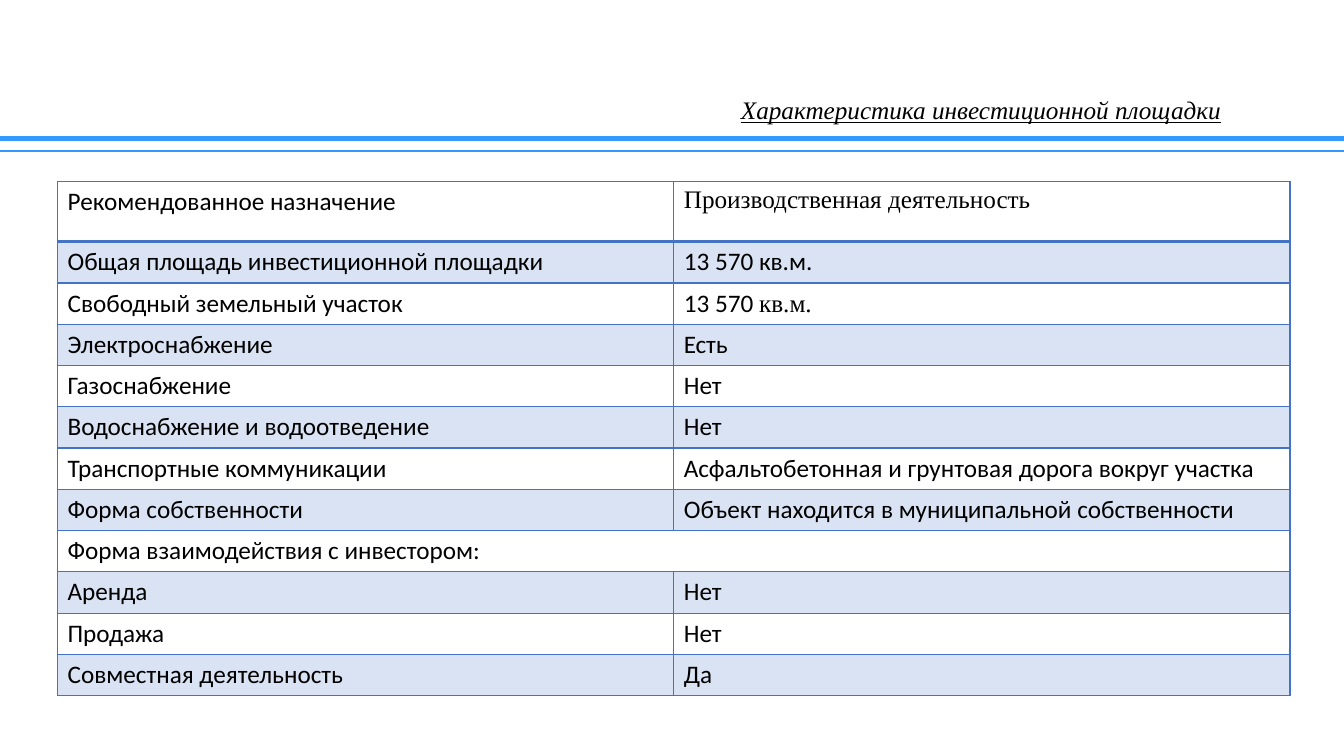
from dataclasses import dataclass

from lxml import etree
from pptx import Presentation
from pptx.dml.color import RGBColor
from pptx.enum import shapes, text
from pptx.oxml import ns
from pptx.util import Cm, Pt


@dataclass(frozen=True)
class Theme:
    """Colours, fonts and type size of the slide."""
    ink: str = "000000"
    rule: str = "3399FF"
    grid: str = "4472C4"
    band: str = "DAE3F3"
    plain: str = "FFFFFF"
    sans: str = "Calibri"
    serif: str = "Times New Roman"
    size: int = 18


THEME = Theme()
TITLE = "Характеристика инвестиционной площадки"
SANS, SERIF = THEME.sans, THEME.serif
ROWS = [
    ("Рекомендованное назначение", [("Производственная деятельность", SERIF)]),
    ("Общая площадь инвестиционной площадки", [("13 570 кв.м.", SANS)]),
    ("Свободный земельный участок", [("13 570 ", SANS), ("кв.м.", SERIF)]),
    ("Электроснабжение", [("Есть", SANS)]),
    ("Газоснабжение", [("Нет", SANS)]),
    ("Водоснабжение и водоотведение", [("Нет", SANS)]),
    ("Транспортные коммуникации",
     [("Асфальтобетонная и грунтовая дорога вокруг участка", SANS)]),
    ("Форма собственности",
     [("Объект находится в муниципальной собственности", SANS)]),
    ("Форма взаимодействия с инвестором:", None),
    ("Аренда", [("Нет", SANS)]),
    ("Продажа", [("Нет", SANS)]),
    ("Совместная деятельность", [("Да", SANS)]),
]
RULES = [(3.5, 3.5), (3.81, 1.5)]
SLIDE_WIDTH, SLIDE_HEIGHT = 33.87, 19.05
TABLE_LEFT, TABLE_TOP = 1.45, 4.57
COLUMN_WIDTH, HEADER_HEIGHT, ROW_HEIGHT = 15.53, 1.52, 1.04


def style_font(font, name):
    """Apply the common type style in the given typeface."""
    font.name = name
    font.size = Pt(THEME.size)
    font.bold = False
    font.color.rgb = RGBColor.from_string(THEME.ink)


def add_title(slide):
    """Place and format the title placeholder."""
    title = slide.shapes.title
    title.left, title.top = Cm(16.94), Cm(2.46)
    title.width, title.height = Cm(15.57), Cm(0.69)
    frame = title.text_frame
    frame.text = TITLE
    frame.auto_size = text.MSO_AUTO_SIZE.NONE
    frame.vertical_anchor = text.MSO_ANCHOR.MIDDLE
    paragraph = frame.paragraphs[0]
    paragraph.alignment = text.PP_ALIGN.CENTER
    paragraph.line_spacing = 0.9
    font = paragraph.runs[0].font
    style_font(font, THEME.serif)
    font.italic = font.underline = True


def add_rule(slide, top, weight):
    """Draw a horizontal line across the slide."""
    rule = slide.shapes.add_connector(
        shapes.MSO_CONNECTOR.STRAIGHT, 0, Cm(top), Cm(SLIDE_WIDTH), Cm(top))
    rule.line.color.rgb = RGBColor.from_string(THEME.rule)
    rule.line.width = Pt(weight)
    etree.SubElement(rule._element.spPr, ns.qn("a:effectLst"))


def set_borders(cell, top, bottom):
    """Give a cell solid borders with the given top and bottom widths."""
    properties = cell._tc.get_or_add_tcPr()
    for side, weight in (("L", 1), ("R", 1), ("T", top), ("B", bottom)):
        line = etree.SubElement(properties, ns.qn(f"a:ln{side}"), w=str(Pt(weight)))
        fill = etree.SubElement(line, ns.qn("a:solidFill"))
        etree.SubElement(fill, ns.qn("a:srgbClr"), val=THEME.grid)


def fill_cell(cell, runs, row):
    """Write the runs of a cell and style it for its row."""
    set_borders(cell, 2 if row == 1 else 1, 2 if row == 0 else 1)
    cell.fill.solid()
    cell.fill.fore_color.rgb = RGBColor.from_string(THEME.band if row % 2 else THEME.plain)
    paragraph = cell.text_frame.paragraphs[0]
    for words, name in runs:
        run = paragraph.add_run()
        run.text = words
        style_font(run.font, name)


def add_site_table(slide):
    """Build the table of site characteristics."""
    heights = [HEADER_HEIGHT] + [ROW_HEIGHT] * (len(ROWS) - 1)
    table = slide.shapes.add_table(
        len(ROWS), 2, Cm(TABLE_LEFT), Cm(TABLE_TOP),
        Cm(2 * COLUMN_WIDTH), Cm(sum(heights))).table
    for column in table.columns:
        column.width = Cm(COLUMN_WIDTH)
    for row, (label, value) in enumerate(ROWS):
        table.rows[row].height = Cm(heights[row])
        fill_cell(table.cell(row, 0), [(label, SANS)], row)
        fill_cell(table.cell(row, 1), value or [], row)
        if value is None:
            table.cell(row, 0).merge(table.cell(row, 1))


def main():
    """Build and save the slide."""
    presentation = Presentation()
    presentation.slide_width = Cm(SLIDE_WIDTH)
    presentation.slide_height = Cm(SLIDE_HEIGHT)
    slide = presentation.slides.add_slide(presentation.slide_layouts[5])
    for top, weight in RULES:
        add_rule(slide, top, weight)
    add_title(slide)
    add_site_table(slide)
    presentation.save("out.pptx")


if __name__ == "__main__":
    main()
